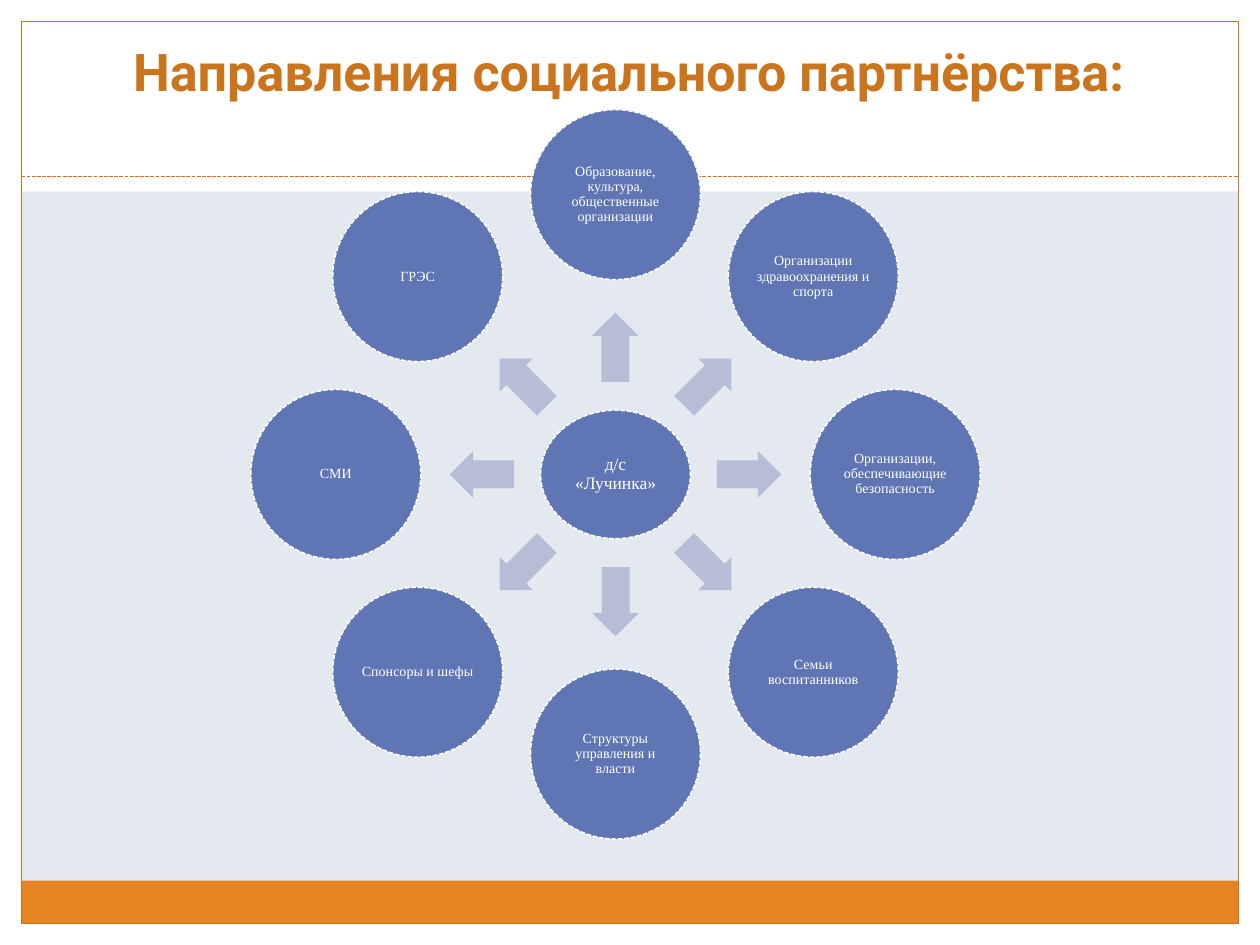
import math

import pptx
import pptx.dml.color
import pptx.enum.dml
import pptx.enum.shapes
import pptx.enum.text
import pptx.util
from lxml import etree

SHAPE = pptx.enum.shapes.MSO_SHAPE
ANCHOR = pptx.enum.text.MSO_ANCHOR
W, H = 10, 7.5
MARGIN = 0.17
HEADER = 1.52
CX, CY = 4.885, 3.765          # centre of the wheel
RADIUS, CIRCLE = 2.22, 1.35
WHITE, ORANGE, BRIGHT = "FFFFFF", "CB741E", "E68422"
BLUE, PALE, BACKGROUND = "6076B4", "B7BDD6", "E4E9EF"
SERIF = "Times New Roman"

# Clockwise from the top
PARTNERS = [
    "Образование, культура, общественные организации",
    "Организации здравоохранения и спорта",
    "Организации, обеспечивающие безопасность",
    "Семьи воспитанников",
    "Структуры управления и власти",
    "Спонсоры и шефы",
    "СМИ",
    "ГРЭС",
]


def inches(*values):
    return [pptx.util.Inches(v) for v in values]


def paint(fmt, color):
    fmt.solid()
    fmt.fore_color.rgb = pptx.dml.color.RGBColor.from_string(color)


def set_line(line, color, width, dashed=False):
    paint(line.fill, color)
    line.width = pptx.util.Pt(width)
    if dashed:
        line.dash_style = pptx.enum.dml.MSO_LINE.SQUARE_DOT


def add_shape(s, kind, x, y, w, h, fill=None, line=None, rotation=0):
    sp = s.shapes.add_shape(kind, *inches(x, y, w, h))
    sp.shadow.inherit = False
    sp.rotation = rotation
    if fill:
        paint(sp.fill, fill)
    else:
        sp.fill.background()
    if line:
        set_line(sp.line, *line)
    else:
        sp.line.fill.background()
    return sp


def set_text(sp, text, size, font, color, bold=False, anchor=ANCHOR.MIDDLE,
             inset=0.01, spacing=None):
    tf = sp.text_frame
    tf.word_wrap = True
    tf.vertical_anchor = anchor
    tf.margin_left = tf.margin_right = tf.margin_top = tf.margin_bottom = pptx.util.Inches(inset)
    p = tf.paragraphs[0]
    p.alignment = pptx.enum.text.PP_ALIGN.CENTER
    p.line_spacing = spacing
    r = p.add_run()
    r.text = text
    r.font.size = pptx.util.Pt(size)
    r.font.name = font
    r.font.bold = bold
    paint(r.font.fill, color)


def add_circle(s, cx, cy, w, h, text, size):
    sp = add_shape(s, SHAPE.OVAL, cx - w / 2, cy - h / 2, w, h, BLUE, (WHITE, 0.9, True))
    set_text(sp, text, size, SERIF, WHITE, spacing=0.9)


def add_arrow(s, angle):
    # The centre ellipse is wider than tall, so sideways arrows are shorter and further out
    flat = math.cos(math.radians(angle)) ** 2
    distance, w, h = 1.01 + 0.05 * flat, 0.55 - 0.04 * flat, 0.37
    cx, cy = on_wheel(angle, distance)
    sp = add_shape(s, SHAPE.RIGHT_ARROW, cx - w / 2, cy - h / 2, w, h, PALE, rotation=angle % 360)
    sp.adjustments[0] = 0.6
    sp.adjustments[1] = 0.5


def on_wheel(angle, distance):
    a = math.radians(angle)
    return CX + distance * math.cos(a), CY + distance * math.sin(a)


def add_rule(s, y):
    c = s.shapes.add_connector(pptx.enum.shapes.MSO_CONNECTOR.STRAIGHT,
                               *inches(MARGIN, y, W - MARGIN, y))
    set_line(c.line, ORANGE, 0.75, True)
    etree.SubElement(c.line._get_or_add_ln().getparent(), pptx.oxml.ns.qn("a:effectLst"))


def add_frame(s):
    paint(s.background.fill, BACKGROUND)
    for box in [(0, H - MARGIN, W, MARGIN), (0, 0, W, HEADER),
                (0, 0, MARGIN, H), (W - MARGIN, 0, MARGIN, H)]:
        add_shape(s, SHAPE.RECTANGLE, *box, WHITE)
    add_shape(s, SHAPE.RECTANGLE, MARGIN, 6.99, W - 2 * MARGIN, 0.34, BRIGHT)
    add_shape(s, SHAPE.RECTANGLE, MARGIN, MARGIN, W - 2 * MARGIN, H - 2 * MARGIN,
              line=(ORANGE, 0.75))
    add_rule(s, 1.4)


def main():
    prs = pptx.Presentation()
    prs.slide_width, prs.slide_height = inches(W, H)
    s = prs.slides.add_slide(prs.slide_layouts[6])

    # Page frame and title
    add_frame(s)
    title = s.shapes.add_textbox(*inches(0.33, 0.25, 9.33, 0.61))
    set_text(title, "Направления социального партнёрства:", 29.7, "Roboto", ORANGE,
             bold=True, anchor=ANCHOR.BOTTOM, inset=0.05)

    # Wheel of partners around the kindergarten
    add_circle(s, CX, CY, 1.19, 1.02, "д/с «Лучинка»", 10)
    for i, partner in enumerate(PARTNERS):
        angle = i * 360 / len(PARTNERS) - 90
        add_arrow(s, angle)
        add_circle(s, *on_wheel(angle, RADIUS), CIRCLE, CIRCLE, partner, 8)

    prs.save("out.pptx")


if __name__ == "__main__":
    main()
